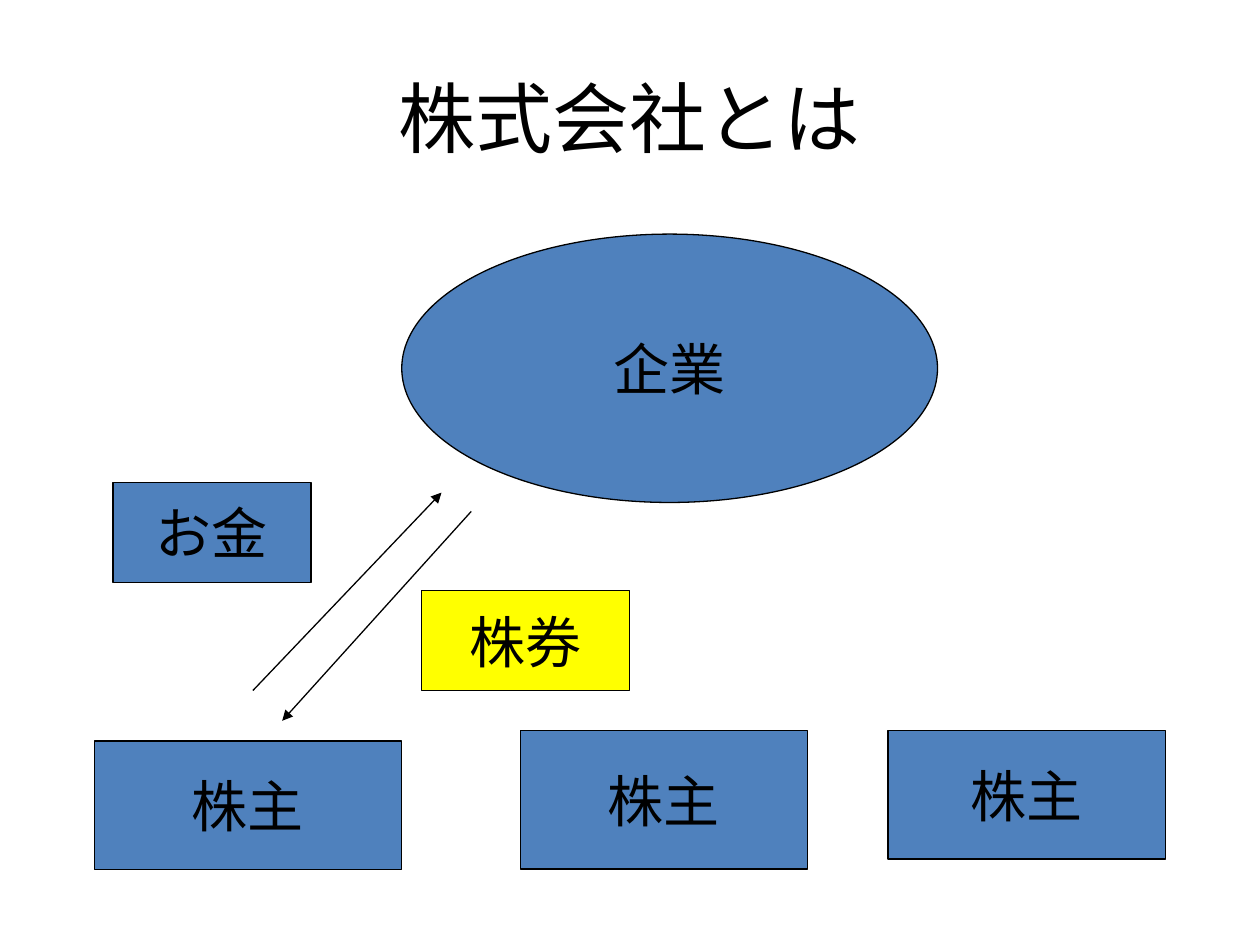
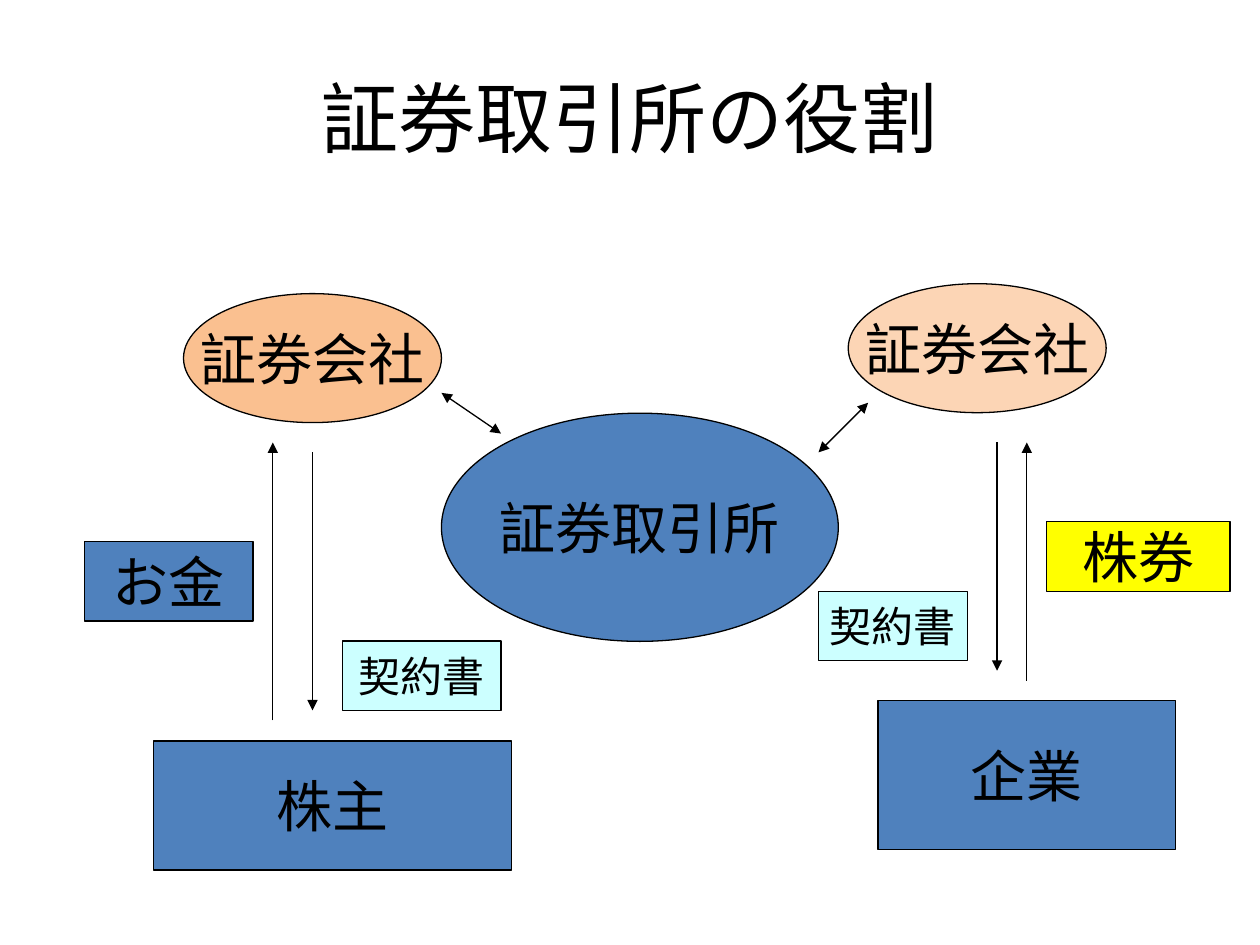
from lxml import etree
from pptx import Presentation
from pptx.dml.color import RGBColor
from pptx.enum import shapes, text
from pptx.oxml.ns import qn
from pptx.util import Cm, Pt

BLACK, BLUE, YELLOW, CYAN = "000000", "4F81BD", "FFFF00", "CCFFFF"
ORANGE, PALE_ORANGE = "FAC090", "FCD5B5"
RECTANGLE, OVAL = shapes.MSO_SHAPE.RECTANGLE, shapes.MSO_SHAPE.OVAL
TITLE_ONLY = 5


def color(value):
    return RGBColor.from_string(value)


def format_text(frame, font_name, size):
    frame.vertical_anchor = text.MSO_ANCHOR.MIDDLE
    for paragraph in frame.paragraphs:
        paragraph.alignment = text.PP_ALIGN.CENTER
        for run in paragraph.runs:
            run.font.name = font_name
            run.font.size = Pt(size)
            run.font.color.rgb = color(BLACK)


def format_line(line):
    line.color.rgb = color(BLACK)
    line.width = Pt(0.75)


def add_titled_slide(presentation, title_text):
    slide = presentation.slides.add_slide(presentation.slide_layouts[TITLE_ONLY])
    title = slide.shapes.title
    title.left, title.top, title.width, title.height = map(Cm, (1.27, 0.76, 22.86, 3.18))
    title.text_frame.text = title_text
    format_text(title.text_frame, "Calibri", 44)
    return slide


def add_label(slide, origin, box, label, fill=BLUE, kind=RECTANGLE, size=32):
    """Add a filled, outlined label; box is (left, top, width, height) from origin."""
    left, top, width, height = box
    shape = slide.shapes.add_shape(
        kind, Cm(origin[0] + left), Cm(origin[1] + top), Cm(width), Cm(height))
    shape.shadow.inherit = False
    shape.fill.solid()
    shape.fill.fore_color.rgb = color(fill)
    format_line(shape.line)
    shape.text_frame.word_wrap = False
    shape.text_frame.text = label
    format_text(shape.text_frame, "Arial", size)


def add_arrow(slide, origin, start, end, ends=("tailEnd",)):
    """Add an arrow between two points measured from origin."""
    points = [Cm(base + offset) for point in (start, end)
              for base, offset in zip(origin, point)]
    connector = slide.shapes.add_connector(shapes.MSO_CONNECTOR.STRAIGHT, *points)
    format_line(connector.line)
    properties = connector._element.spPr
    outline = properties.find(qn("a:ln"))
    for name in ends:
        etree.SubElement(outline, qn(f"a:{name}"), type="triangle")
    etree.SubElement(properties, qn("a:effectLst"))


def add_company_and_shareholders(slide, origin):
    shareholders = [(0, 10.22, 6.2, 2.59), (8.59, 10.01, 5.79, 2.79),
                    (16, 10.01, 5.59, 2.59)]
    for box in shareholders:
        add_label(slide, origin, box, "株主")
    add_label(slide, origin, (6.2, 0, 10.8, 5.41), "企業", kind=OVAL)
    add_arrow(slide, origin, (7.6, 5.59), (3.79, 9.81))
    add_arrow(slide, origin, (3.2, 9.2), (7, 5.21))
    add_label(slide, origin, (6.6, 7.19, 4.19, 2.01), "株券", YELLOW)
    add_label(slide, origin, (0.38, 5.01, 3.99, 2.01), "お金")


def add_trading_side(slide, origin, broker, party, payment, contract, up, down, link):
    """Add a broker above its client, what passes between them, and the link to the exchange.

    Labels are (box, text, fill); up and down are (x, start y, end y).
    """
    broker_box, broker_fill = broker
    add_label(slide, origin, broker_box, "証券会社", broker_fill, OVAL)
    add_label(slide, origin, *party)
    add_label(slide, origin, *payment)
    add_label(slide, origin, contract, "契約書", CYAN, size=24)
    for x, start, end in (up, down):
        add_arrow(slide, origin, (x, start), (x, end))
    add_arrow(slide, origin, *link, ends=("headEnd", "tailEnd"))


def build_company_slide(presentation):
    slide = add_titled_slide(presentation, "株式会社とは")
    add_company_and_shareholders(slide, origin=(1.9, 4.72))


def build_exchange_slide(presentation):
    slide = add_titled_slide(presentation, "証券取引所の役割")
    add_label(slide, (8.9, 8.33), (0, 0, 8, 4.6), "証券取引所", kind=OVAL)
    add_trading_side(
        slide, origin=(1.7, 5.92),
        broker=((2, 0, 5.2, 2.6), ORANGE),
        party=((1.4, 9.02, 7.21, 2.6), "株主", BLUE),
        payment=((0, 5, 3.4, 1.6), "お金", BLUE),
        contract=(5.2, 7, 3.2, 1.4),
        up=(3.8, 8.6, 3), down=(4.6, 3.2, 8.4),
        link=((7.2, 2), (8.4, 2.82)))
    add_trading_side(
        slide, origin=(16.5, 5.72),
        broker=((0.6, 0, 5.2, 2.6), PALE_ORANGE),
        party=((1.2, 8.4, 6, 3), "企業", BLUE),
        payment=((4.6, 4.8, 3.7, 1.4), "株券", YELLOW),
        contract=(0, 6.2, 3, 1.4),
        up=(4.2, 8, 3.2), down=(3.6, 3.2, 7.8),
        link=((0, 3.4), (1, 2.4)))


def main():
    presentation = Presentation()
    presentation.slide_width, presentation.slide_height = Cm(25.4), Cm(19.05)
    build_company_slide(presentation)
    build_exchange_slide(presentation)
    presentation.save("out.pptx")


if __name__ == "__main__":
    main()
